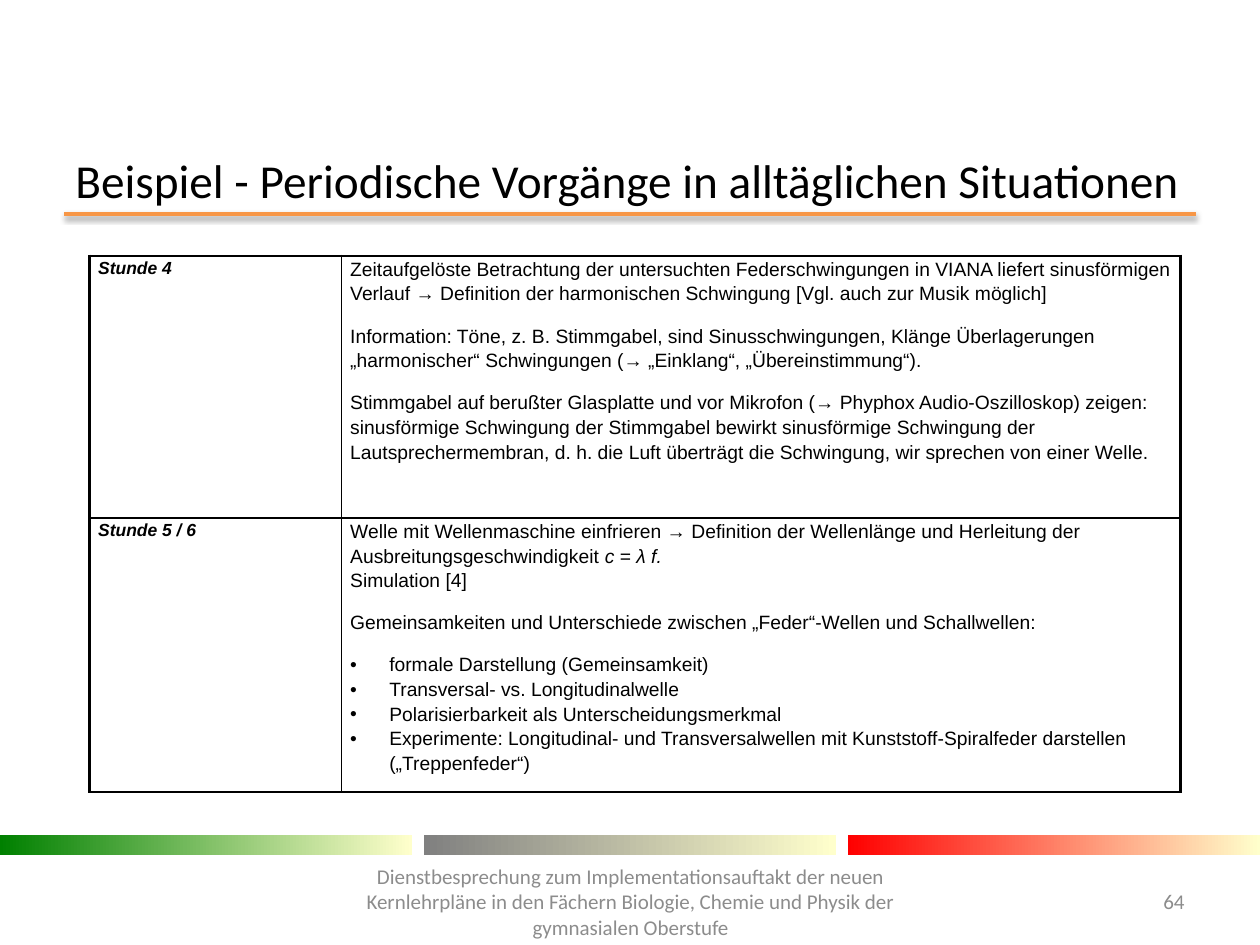
from lxml import etree
from pptx import Presentation
from pptx import util as u
from pptx.dml import color
from pptx.enum import shapes, text
from pptx.oxml import ns

# Content
TITLE = "Beispiel - Periodische Vorgänge in alltäglichen Situationen"
FOOT = ("Dienstbesprechung zum Implementationsauftakt der neuen Kernlehrpläne "
        "in den Fächern Biologie, Chemie und Physik der gymnasialen Oberstufe")
PAGE = "64"
# Each lesson: label, paragraphs, bullets; a tuple alternates upright and italic
LESSONS = [
    ("Stunde 4", [
        "Zeitaufgelöste Betrachtung der untersuchten Federschwingungen in VIANA "
        "liefert sinusförmigen Verlauf → Definition der harmonischen Schwingung "
        "[Vgl. auch zur Musik möglich]",
        "Information: Töne, z. B. Stimmgabel, sind Sinusschwingungen, Klänge "
        "Überlagerungen „harmonischer“ Schwingungen (→ „Einklang“, "
        "„Übereinstimmung“).",
        "Stimmgabel auf berußter Glasplatte und vor Mikrofon (→ Phyphox "
        "Audio-Oszilloskop) zeigen: sinusförmige Schwingung der Stimmgabel bewirkt "
        "sinusförmige Schwingung der Lautsprechermembran, d. h. die Luft überträgt "
        "die Schwingung, wir sprechen von einer Welle.",
    ], []),
    ("Stunde 5 / 6", [
        ("Welle mit Wellenmaschine einfrieren → Definition der Wellenlänge und "
         "Herleitung der Ausbreitungsgeschwindigkeit ", "c = λ f.",
         "\nSimulation [4]"),
        "Gemeinsamkeiten und Unterschiede zwischen „Feder“-Wellen und Schallwellen:",
    ], [
        "formale Darstellung (Gemeinsamkeit)",
        "Transversal- vs. Longitudinalwelle",
        "Polarisierbarkeit als Unterscheidungsmerkmal",
        "Experimente: Longitudinal- und Transversalwellen mit "
        "Kunststoff-Spiralfeder darstellen („Treppenfeder“)",
    ]),
]
BARS = ["008000", "808080", "FF0000"]
FADE = "FFFFCC"

# Layout
WIDE, HIGH = 10, 7.5
COLS, ROWS = [2, 6.66], [2.08, 2.04]
BAR, STEP = 3.27, 3.365
BODY = dict(name="Arial", size=u.Pt(11))
LABEL = dict(name="Arial", size=u.Pt(10), bold=True, italic=True)


def rgb(code):
    return color.RGBColor.from_string(code)


def style(font, ink="000000", **look):
    for key, val in look.items():
        setattr(font, key, val)
    font.color.rgb = rgb(ink)


def put(para, parts, ink="000000", **look):
    parts = (parts,) if isinstance(parts, str) else parts
    for i, part in enumerate(parts):
        for j, line in enumerate(part.split("\n")):
            if j:
                para.add_line_break()
            if line:
                run = para.add_run()
                run.text = line
                style(run.font, ink, **look)
                if i % 2:
                    run.font.italic = True


def box(slide, at, words, size, align, ink):
    frame = slide.shapes.add_textbox(*map(u.Inches, at)).text_frame
    frame.word_wrap = True
    frame.vertical_anchor = text.MSO_ANCHOR.MIDDLE
    para = frame.paragraphs[0]
    para.alignment = align
    put(para, words, ink, name="Calibri", size=u.Pt(size))


def bullet(para):
    props = para._p.get_or_add_pPr()
    props.set("marL", str(u.Inches(0.31)))
    props.set("indent", str(-u.Inches(0.31)))
    etree.SubElement(props, ns.qn("a:buFont"), typeface="Arial")
    etree.SubElement(props, ns.qn("a:buChar"), char="•")


def border(cell, widths):
    props = cell._tc.get_or_add_tcPr()
    for i, (side, width) in enumerate(widths.items()):
        line = etree.Element(ns.qn("a:ln" + side), w=str(u.Pt(width)))
        fill = etree.SubElement(line, ns.qn("a:solidFill"))
        etree.SubElement(fill, ns.qn("a:srgbClr"), val="000000")
        props.insert(i, line)


def rule(slide):
    line = slide.shapes.add_connector(
        shapes.MSO_CONNECTOR.STRAIGHT,
        *map(u.Inches, (0.51, 1.7, WIDE - 0.51, 1.7)))
    line.line.color.rgb = rgb("F79646")
    line.line.width = u.Pt(2)
    effect = etree.SubElement(line._element.spPr, ns.qn("a:effectLst"))
    shade = etree.SubElement(
        effect, ns.qn("a:outerShdw"), blurRad=str(u.Pt(3.1)),
        dist=str(u.Pt(1.6)), dir="5400000", rotWithShape="0")
    ink = etree.SubElement(shade, ns.qn("a:srgbClr"), val="000000")
    etree.SubElement(ink, ns.qn("a:alpha"), val="38000")


def bars(slide):
    for i, tone in enumerate(BARS):
        bar = slide.shapes.add_shape(
            shapes.MSO_SHAPE.RECTANGLE,
            *map(u.Inches, (i * STEP, 6.63, BAR, 0.16)))
        bar.shadow.inherit = False
        bar.line.fill.background()
        bar.fill.gradient()
        bar.fill.gradient_angle = 0
        for stop, code, spot in zip(bar.fill.gradient_stops, (tone, FADE), (0, 1)):
            stop.color.rgb = rgb(code)
            stop.position = spot


def fill(cell, items, looks):
    frame = cell.text_frame
    for i, (words, dot) in enumerate(items):
        para = frame.add_paragraph() if i else frame.paragraphs[0]
        para.line_spacing = 1.15
        para.space_after = u.Pt(0 if dot or i == len(items) - 1 else 10)
        if dot:
            bullet(para)
        put(para, words, **looks)


def grid(slide):
    table = slide.shapes.add_table(
        len(ROWS), len(COLS),
        *map(u.Inches, (0.71, 2.03, sum(COLS), sum(ROWS)))).table
    table.first_row = table.horz_banding = False
    for col, size in zip(table.columns, COLS):
        col.width = u.Inches(size)
    for r, (label, paras, dots) in enumerate(LESSONS):
        table.rows[r].height = u.Inches(ROWS[r])
        items = [(p, False) for p in paras] + [(d, True) for d in dots]
        for c, (part, look) in enumerate([([(label, False)], LABEL), (items, BODY)]):
            cell = table.cell(r, c)
            cell.fill.background()
            cell.margin_left = cell.margin_right = u.Inches(0.07)
            cell.margin_top = cell.margin_bottom = 0
            edge = dict(L=c == 0, R=c == len(COLS) - 1,
                        T=r == 0, B=r == len(ROWS) - 1)
            border(cell, {s: 1.5 if out else 1 for s, out in edge.items()})
            fill(cell, part, look)


def main():
    deck = Presentation()
    deck.slide_width, deck.slide_height = u.Inches(WIDE), u.Inches(HIGH)
    slide = deck.slides.add_slide(deck.slide_layouts[6])
    # Rule and colour bars
    rule(slide)
    bars(slide)
    # Title, page number and footer
    side = text.PP_ALIGN
    box(slide, (0.5, 1.23, 9, 0.39), TITLE, 27, side.LEFT, "000000")
    box(slide, (8.86, 6.95, 0.64, 0.4), PAGE, 12, side.RIGHT, "8C8C8C")
    box(slide, (2.68, 6.87, 4.65, 0.57), FOOT, 12, side.CENTER, "8C8C8C")
    # Lesson table
    grid(slide)
    deck.save("out.pptx")


if __name__ == "__main__":
    main()
